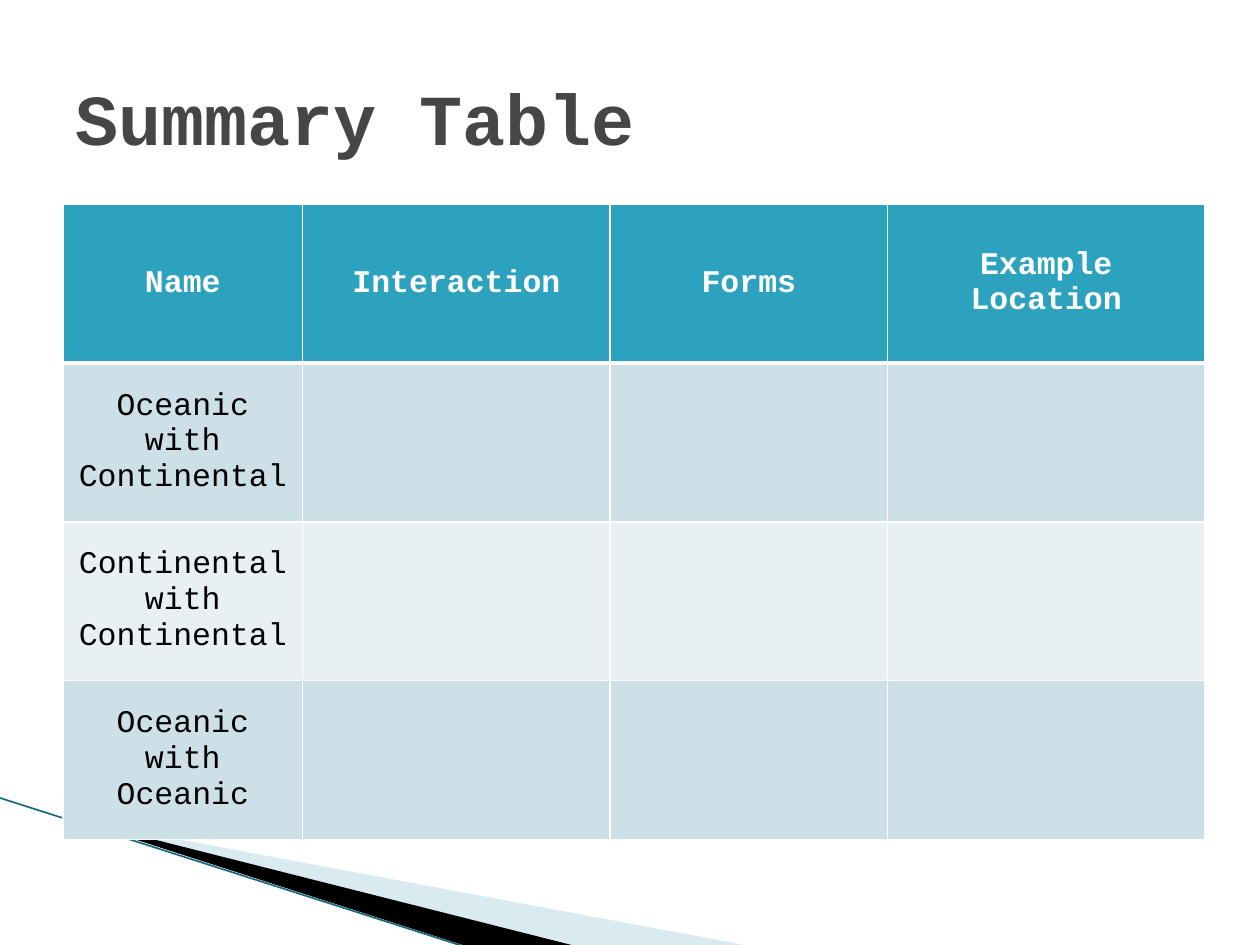
import pptx
import pptx.dml.color
import pptx.enum.shapes
import pptx.enum.text
import pptx.oxml
import pptx.oxml.ns
import pptx.util
from lxml import etree

Cm, Pt = pptx.util.Cm, pptx.util.Pt
MID = pptx.enum.text.MSO_ANCHOR.MIDDLE
MONO = "Courier New"

# Content
TITLE = "Summary Table"
HEADS = ["Name", "Interaction", "Forms", "Example Location"]
NAMES = ["Oceanic with Continental", "Continental with Continental",
         "Oceanic with Oceanic"]

# Formats
BIG = {"name": MONO, "size": Pt(41), "bold": True}
HEAD = {"name": MONO, "size": Pt(18), "bold": True}
BODY = {**HEAD, "bold": False}
BANDS = ["CDE0E8", "E8F0F4"]

# Sizes in cm
LEFT, TOP, TALL = 1.27, 4.12, 3.2
COLS = [4.83, 6.2, 5.59, 6.4]

# Corner wedges: points in cm, fill, opacity in percent
WEDGES = [
    ([(1.4, 16.51), (15.11, 19.07), (11.58, 19.07)], "A0CBDC", 40),
    ([(1.35, 16.48), (11.6, 19.07), (9.45, 19.09)], "000000", 100),
]
EDGE = [(-0.02, 16.08), (9.42, 19.1)]


def tint(code):
    return pptx.dml.color.RGBColor.from_string(code)


def paint(part, code):
    part.fill.solid()
    part.fill.fore_color.rgb = tint(code)


def style(para, form, code):
    for key, value in form.items():
        setattr(para.font, key, value)
    para.font.color.rgb = tint(code)


def sub(node, tag, **attrs):
    return etree.SubElement(node, pptx.oxml.ns.qn(tag), **attrs)


def border(cell, base):
    props = cell._tc.get_or_add_tcPr()
    for side in "LRTB":
        width = base if side == "B" else 1
        line = sub(props, "a:ln" + side, w=str(Pt(width)))
        sub(sub(line, "a:solidFill"), "a:srgbClr", val="FFFFFF")


deck = pptx.Presentation()
deck.slide_width, deck.slide_height = Cm(25.4), Cm(19.05)
slide = deck.slides.add_slide(deck.slide_layouts[6])
shapes = slide.shapes

# Corner decoration
for points, code, alpha in WEDGES:
    spots = [(Cm(x), Cm(y)) for x, y in points]
    pen = shapes.build_freeform(*spots[0])
    pen.add_line_segments(spots[1:], close=True)
    wedge = pen.convert_to_shape()
    wedge.shadow.inherit = False
    wedge.line.fill.background()
    paint(wedge, code)
    if alpha < 100:
        hue = wedge._element.spPr.find(".//" + pptx.oxml.ns.qn("a:srgbClr"))
        sub(hue, "a:alpha", val=str(alpha * 1000))

ends = [Cm(n) for spot in EDGE for n in spot]
edge = shapes.add_connector(pptx.enum.shapes.MSO_CONNECTOR.STRAIGHT, *ends)
edge.line.color.rgb = tint("16697A")
edge.line.width = Pt(0.95)
sub(edge._element.spPr, "a:effectLst")

# Table
rows = [HEADS] + [[name, "", "", ""] for name in NAMES]
grid = shapes.add_table(len(rows), len(COLS), Cm(LEFT), Cm(TOP),
                        Cm(sum(COLS)), Cm(TALL * len(rows))).table
for col, width in zip(grid.columns, COLS):
    col.width = Cm(width)
for r, row in enumerate(rows):
    grid.rows[r].height = Cm(TALL)
    for c, text in enumerate(row):
        cell = grid.cell(r, c)
        border(cell, 1 if r else 3)
        paint(cell, BANDS[(r - 1) % 2] if r else "2DA2BF")
        cell.vertical_anchor = MID
        cell.text = text
        para = cell.text_frame.paragraphs[0]
        para.alignment = pptx.enum.text.PP_ALIGN.CENTER
        style(para, BODY if r else HEAD, "000000" if r else "FFFFFF")

# Title
box = shapes.add_textbox(Cm(LEFT), Cm(0.76), Cm(22.86), Cm(3.18))
frame = box.text_frame
frame.word_wrap = True
frame.vertical_anchor = MID
frame.text = TITLE
style(frame.paragraphs[0], BIG, "464646")

deck.save("out.pptx")
